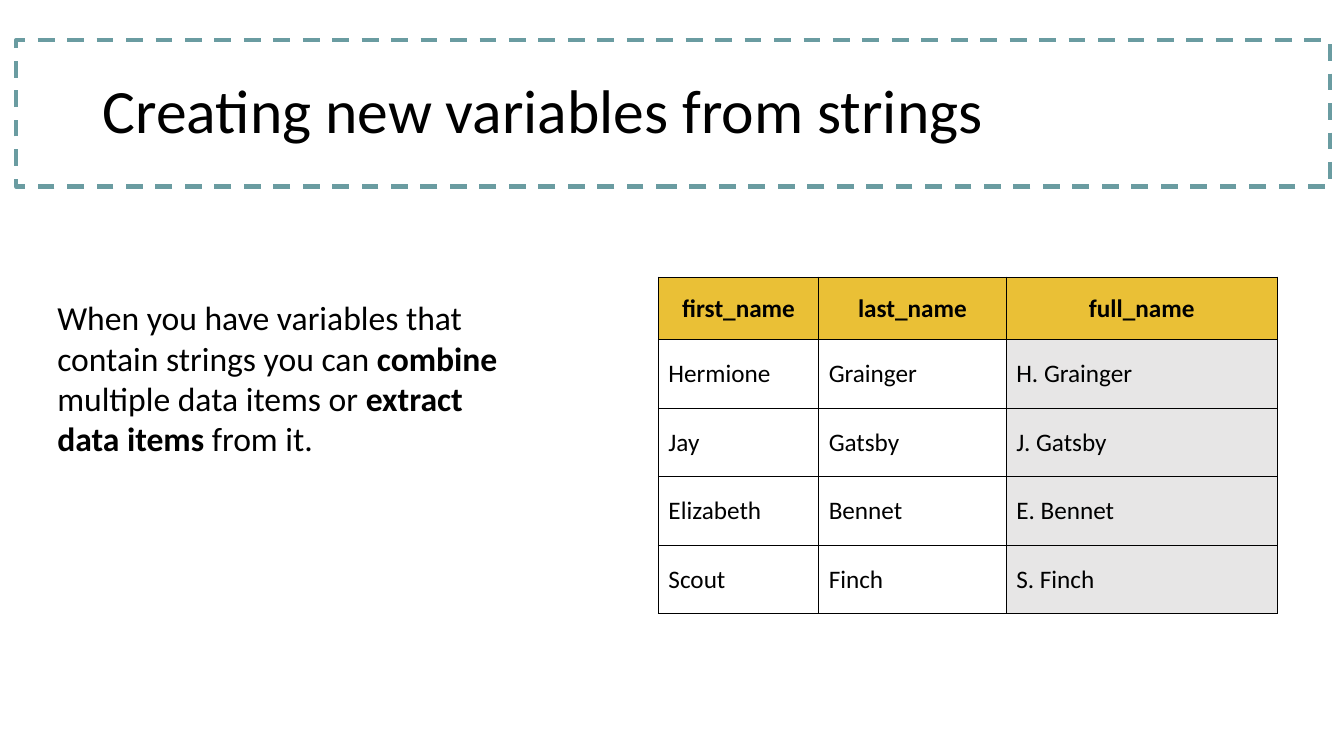
from lxml import etree
from pptx import Presentation
from pptx.dml.color import RGBColor
from pptx.enum import dml, shapes, text
from pptx.oxml import ns
from pptx.util import Inches, Pt

TITLE = "Creating new variables from strings"
BODY = [  # (text, bold)
    ("When you have variables that contain strings you can ", False),
    ("combine ", True),
    ("multiple data items or ", False),
    ("extract data items ", True),
    ("from it.", False),
]
NAMES = [
    ("first_name", "last_name", "full_name"),
    ("Hermione", "Grainger", "H. Grainger"),
    ("Jay", "Gatsby", "J. Gatsby"),
    ("Elizabeth", "Bennet", "E. Bennet"),
    ("Scout", "Finch", "S. Finch"),
]
COL_WIDTHS = (1.59, 1.86, 2.69)
HEADER_HEIGHT, ROW_HEIGHT = 0.62, 0.68

FONT = "Calibri"
BLACK = RGBColor(0x00, 0x00, 0x00)
TEAL = RGBColor(0x6A, 0x9C, 0xA1)
GOLD = RGBColor(0xEA, 0xC0, 0x36)
GREY = RGBColor(0xE7, 0xE6, 0xE6)


def add_run(p, content, size, bold=False):
    r = p.add_run()
    r.text = content
    r.font.name = FONT
    r.font.size = Pt(size)
    r.font.bold = bold
    r.font.color.rgb = BLACK


def add_text_box(s, left, top, width, height, anchor):
    tf = s.shapes.add_textbox(*map(Inches, (left, top, width, height))).text_frame
    tf.word_wrap = True
    tf.vertical_anchor = anchor
    return tf.paragraphs[0]


def add_borders(cell):
    """Draw a 1 pt black line on all four sides; call before filling the cell."""
    tc_pr = cell._tc.get_or_add_tcPr()
    for side in ("a:lnL", "a:lnR", "a:lnT", "a:lnB"):
        ln = etree.SubElement(tc_pr, ns.qn(side), w=str(Pt(1)))
        fill = etree.SubElement(ln, ns.qn("a:solidFill"))
        etree.SubElement(fill, ns.qn("a:srgbClr"), val=str(BLACK))


def add_title(s):
    frame = s.shapes.add_shape(shapes.MSO_SHAPE.RECTANGLE, Inches(0.16),
                               Inches(0.4), Inches(13.03), Inches(1.45))
    frame.shadow.inherit = False
    frame.fill.background()
    frame.line.color.rgb = TEAL
    frame.line.width = Pt(3)
    frame.line.dash_style = dml.MSO_LINE.DASH
    p = add_text_box(s, 0.92, 0.4, 11.5, 1.45, text.MSO_ANCHOR.MIDDLE)
    p.line_spacing = 0.9
    add_run(p, TITLE, 44)


def add_body(s):
    p = add_text_box(s, 0.47, 2.9, 4.6, 2.12, text.MSO_ANCHOR.TOP)
    for content, bold in BODY:
        add_run(p, content, 24, bold)


def add_name_table(s):
    heights = [HEADER_HEIGHT] + [ROW_HEIGHT] * (len(NAMES) - 1)
    table = s.shapes.add_table(len(NAMES), len(COL_WIDTHS), Inches(6.53), Inches(2.75),
                               Inches(sum(COL_WIDTHS)), Inches(sum(heights))).table
    for column, width in zip(table.columns, COL_WIDTHS):
        column.width = Inches(width)
    for row, height in zip(table.rows, heights):
        row.height = Inches(height)
    for i, names in enumerate(NAMES):
        for j, name in enumerate(names):
            is_header = i == 0
            cell = table.cell(i, j)
            cell.vertical_anchor = text.MSO_ANCHOR.MIDDLE
            add_borders(cell)
            if is_header or j == len(names) - 1:
                cell.fill.solid()
                cell.fill.fore_color.rgb = GOLD if is_header else GREY
            else:
                cell.fill.background()
            p = cell.text_frame.paragraphs[0]
            p.alignment = text.PP_ALIGN.CENTER if is_header else text.PP_ALIGN.LEFT
            add_run(p, name, 18, is_header)


def main():
    prs = Presentation()
    prs.slide_width, prs.slide_height = Inches(13.33), Inches(7.5)
    s = prs.slides.add_slide(prs.slide_layouts[6])
    add_title(s)
    add_body(s)
    add_name_table(s)
    prs.save("out.pptx")


if __name__ == "__main__":
    main()
